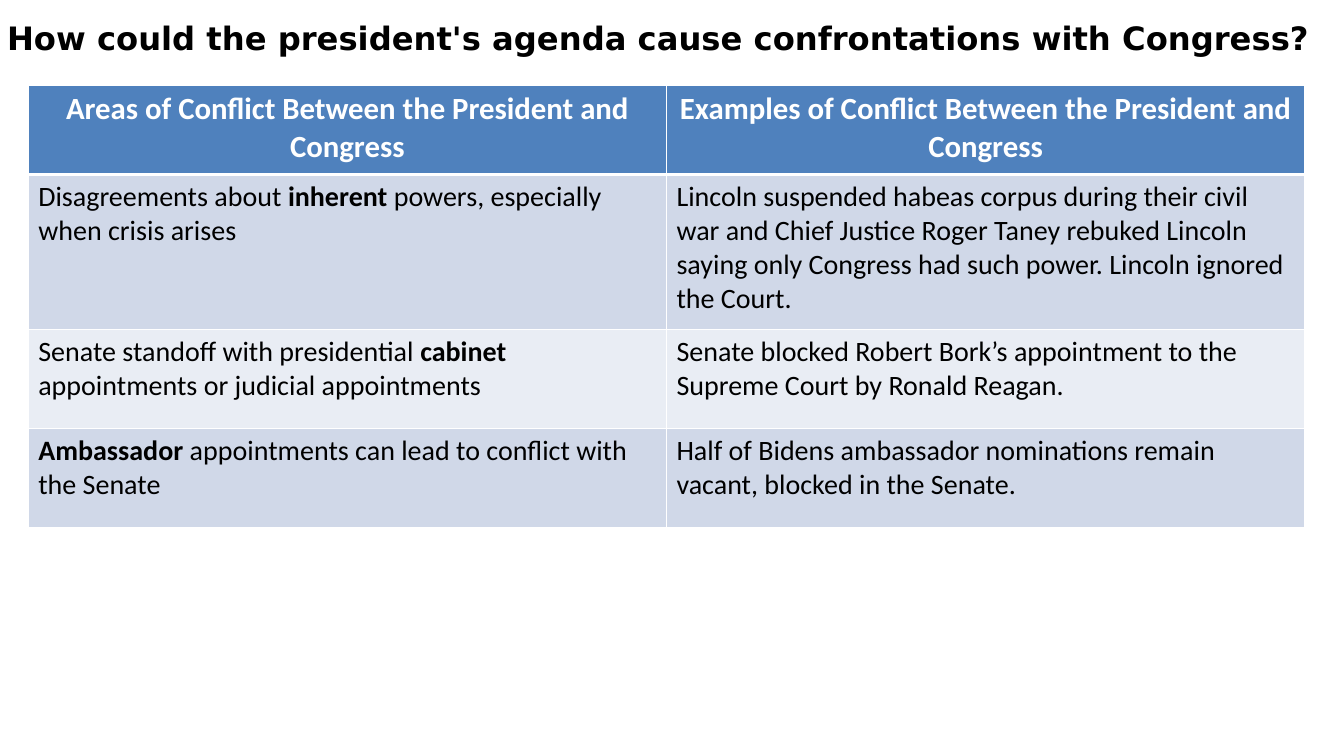
from lxml import etree
from pptx import Presentation
from pptx.dml.color import RGBColor
from pptx.enum.text import MSO_AUTO_SIZE, PP_ALIGN
from pptx.oxml.ns import qn
from pptx.util import Inches, Pt

LEFT, CENTER = PP_ALIGN.LEFT, PP_ALIGN.CENTER
GROW = MSO_AUTO_SIZE.SHAPE_TO_FIT_TEXT

TITLE = "How could the president's agenda cause confrontations with Congress?"
# Text between ** marks is bold
CONFLICTS = [
    ("Areas of Conflict Between the President and Congress",
     "Examples of Conflict Between the President and Congress"),
    ("Disagreements about **inherent** powers, especially when crisis arises",
     "Lincoln suspended habeas corpus during their civil war and Chief Justice "
     "Roger Taney rebuked Lincoln saying only Congress had such power. "
     "Lincoln ignored the Court."),
    ("Senate standoff with presidential **cabinet** appointments or judicial appointments",
     "Senate blocked Robert Bork’s appointment to the Supreme Court by Ronald Reagan."),
    ("**Ambassador** appointments can lead to conflict with the Senate",
     "Half of Bidens ambassador nominations remain vacant, blocked in the Senate."),
]
ROW_HEIGHTS = [0.88, 1.54, 0.98, 0.98]


def color(hex_string):
    return RGBColor.from_string(hex_string)


def write_text(frame, text, size, font="Calibri", fill="000000", bold=False, align=LEFT):
    paragraph = frame.paragraphs[0]
    paragraph.alignment = align
    for index, part in enumerate(text.split("**")):
        if part:
            run = paragraph.add_run()
            run.text = part
            run.font.name = font
            run.font.size = Pt(size)
            run.font.bold = bold or index % 2 == 1
            run.font.color.rgb = color(fill)


class ConflictSlide:
    header_fill = "4F81BD"
    band_fills = ("E9EDF4", "D0D8E8")
    white = "FFFFFF"

    def __init__(self, presentation):
        self.slide = presentation.slides.add_slide(presentation.slide_layouts[6])

    def title(self, text, left, top, width, height):
        shape = self.slide.shapes.add_textbox(
            Inches(left), Inches(top), Inches(width), Inches(height))
        frame = shape.text_frame
        frame.word_wrap = True
        frame.auto_size = GROW
        frame.margin_left = frame.margin_right = 0
        frame.margin_top = frame.margin_bottom = 0
        write_text(frame, text, 23, font="DejaVu Sans", bold=True)

    def borders(self, cell, bottom, top):
        properties = cell._tc.get_or_add_tcPr()
        for side, points in (("L", 1), ("R", 1), ("T", top), ("B", bottom)):
            line = etree.SubElement(properties, qn(f"a:ln{side}"), w=str(Pt(points)))
            solid = etree.SubElement(line, qn("a:solidFill"))
            etree.SubElement(solid, qn("a:srgbClr"), val=self.white)

    def table(self, rows, heights, left, top, width):
        columns = len(rows[0])
        table = self.slide.shapes.add_table(
            len(rows), columns, Inches(left), Inches(top),
            Inches(width), Inches(sum(heights))).table
        for column in table.columns:
            column.width = Inches(width / columns)
        for row_index, texts in enumerate(rows):
            table.rows[row_index].height = Inches(heights[row_index])
            header = row_index == 0
            for column_index, text in enumerate(texts):
                cell = table.cell(row_index, column_index)
                # A thick rule separates the header from the body
                self.borders(cell, bottom=3 if header else 1,
                             top=3 if row_index == 1 else 1)
                cell.fill.solid()
                cell.fill.fore_color.rgb = color(
                    self.header_fill if header else self.band_fills[row_index % 2])
                if header:
                    write_text(cell.text_frame, text, 22, fill=self.white,
                               bold=True, align=CENTER)
                else:
                    write_text(cell.text_frame, text, 20)


def main():
    presentation = Presentation()
    presentation.slide_width = Inches(13.33)
    presentation.slide_height = Inches(7.5)
    page = ConflictSlide(presentation)

    # Heading
    page.title(TITLE, 0.07, 0.18, 13.2, 0.39)

    # Conflicts and their examples
    page.table(CONFLICTS, ROW_HEIGHTS, 0.28, 0.85, 12.66)

    presentation.save("out.pptx")


if __name__ == "__main__":
    main()
